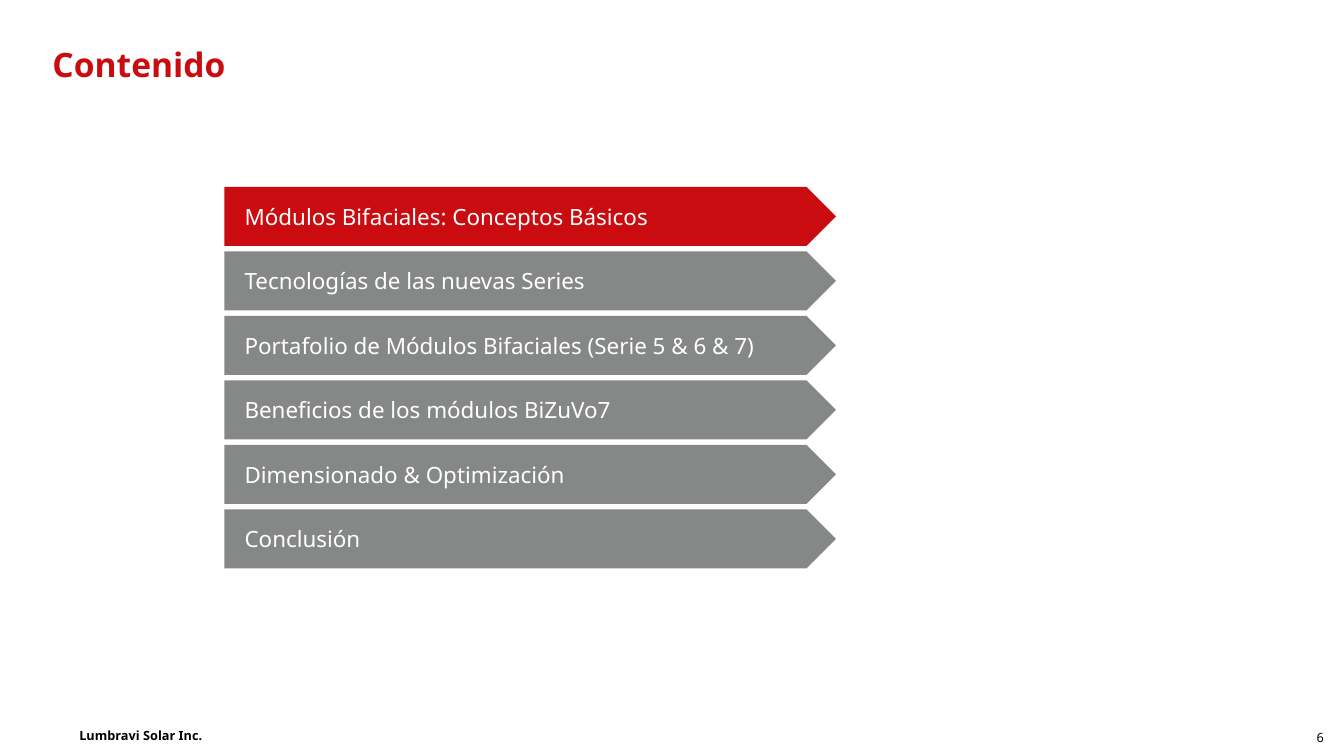
from dataclasses import dataclass

from pptx import Presentation
from pptx.dml.color import RGBColor
from pptx.enum.shapes import MSO_SHAPE
from pptx.enum.text import MSO_ANCHOR, PP_ALIGN
from pptx.util import Inches, Pt

RED, GRAY, WHITE, BLACK = "CA0B0F", "868887", "FFFFFF", "000000"
SLIDE_WIDTH = 10
SLIDE_HEIGHT = SLIDE_WIDTH * 9 / 16
BANNER_LEFT, BANNER_TOP = 1.67, 1.39
BANNER_WIDTH, BANNER_HEIGHT = 4.55, 0.44
BANNER_PITCH = 0.48


@dataclass
class TextStyle:
    size: float
    color: str
    bold: bool = False
    align: PP_ALIGN = PP_ALIGN.LEFT
    anchor: MSO_ANCHOR = MSO_ANCHOR.MIDDLE
    side_margin: float = 0
    wrap: bool = True


@dataclass
class Topic:
    text: str
    fill: str = GRAY


@dataclass
class Footer:
    text: str
    box: tuple[float, float, float, float]
    style: TextStyle


TITLE_STYLE = TextStyle(18, RED, bold=True, anchor=MSO_ANCHOR.TOP)
BANNER_STYLE = TextStyle(12, WHITE, side_margin=0.15)

TOPICS = [
    Topic("Módulos Bifaciales: Conceptos Básicos", RED),
    Topic("Tecnologías de las nuevas Series"),
    Topic("Portafolio de Módulos Bifaciales (Serie 5 & 6 & 7)"),
    Topic("Beneficios de los módulos BiZuVo7"),
    Topic("Dimensionado & Optimización"),
    Topic("Conclusión"),
]

FOOTERS = [
    Footer("6", (9.57, 5.38, 0.28, 0.21),
           TextStyle(6.8, BLACK, align=PP_ALIGN.RIGHT, wrap=False)),
    Footer("Lumbravi Solar Inc.", (0.59, 5.38, 1.34, 0.19),
           TextStyle(6.8, BLACK, bold=True, wrap=False)),
]


def rgb(color: str) -> RGBColor:
    return RGBColor.from_string(color)


def write_text(shape, text: str, style: TextStyle) -> None:
    frame = shape.text_frame
    frame_format = {
        "margin_left": Inches(style.side_margin),
        "margin_right": Inches(style.side_margin),
        "margin_top": 0,
        "margin_bottom": 0,
        "vertical_anchor": style.anchor,
        "word_wrap": style.wrap,
    }
    for name, value in frame_format.items():
        setattr(frame, name, value)

    paragraph = frame.paragraphs[0]
    paragraph.alignment = style.align
    run = paragraph.add_run()
    run.text = text
    font_format = {"name": "Noto Sans", "size": Pt(style.size), "bold": style.bold}
    for name, value in font_format.items():
        setattr(run.font, name, value)
    run.font.color.rgb = rgb(style.color)


def add_title(slide, text: str) -> None:
    title = slide.shapes.title
    position = {"left": 0.39, "top": 0.33, "width": 6.52, "height": 0.71}
    for name, value in position.items():
        setattr(title, name, Inches(value))
    write_text(title, text, TITLE_STYLE)


def add_banner(shapes, topic: Topic, row: int) -> None:
    shape = shapes.add_shape(
        MSO_SHAPE.PENTAGON,
        Inches(BANNER_LEFT), Inches(BANNER_TOP + row * BANNER_PITCH),
        Inches(BANNER_WIDTH), Inches(BANNER_HEIGHT))
    shape.adjustments[0] = 0.5
    shape.shadow.inherit = False
    shape.fill.solid()
    shape.fill.fore_color.rgb = rgb(topic.fill)
    shape.line.fill.background()
    write_text(shape, topic.text, BANNER_STYLE)


def add_footer(slide, footer: Footer) -> None:
    text_box = slide.shapes.add_textbox(*map(Inches, footer.box))
    write_text(text_box, footer.text, footer.style)


def main() -> None:
    presentation = Presentation()
    presentation.slide_width = Inches(SLIDE_WIDTH)
    presentation.slide_height = Inches(SLIDE_HEIGHT)
    slide = presentation.slides.add_slide(presentation.slide_layouts[5])
    slide.background.fill.solid()
    slide.background.fill.fore_color.rgb = rgb(WHITE)

    # Page number and company name
    for footer in FOOTERS:
        add_footer(slide, footer)

    # Heading
    add_title(slide, "Contenido")

    # Agenda banners, the current topic in red
    agenda = slide.shapes.add_group_shape()
    for row, topic in enumerate(TOPICS):
        add_banner(agenda.shapes, topic, row)

    presentation.save("out.pptx")


if __name__ == "__main__":
    main()
